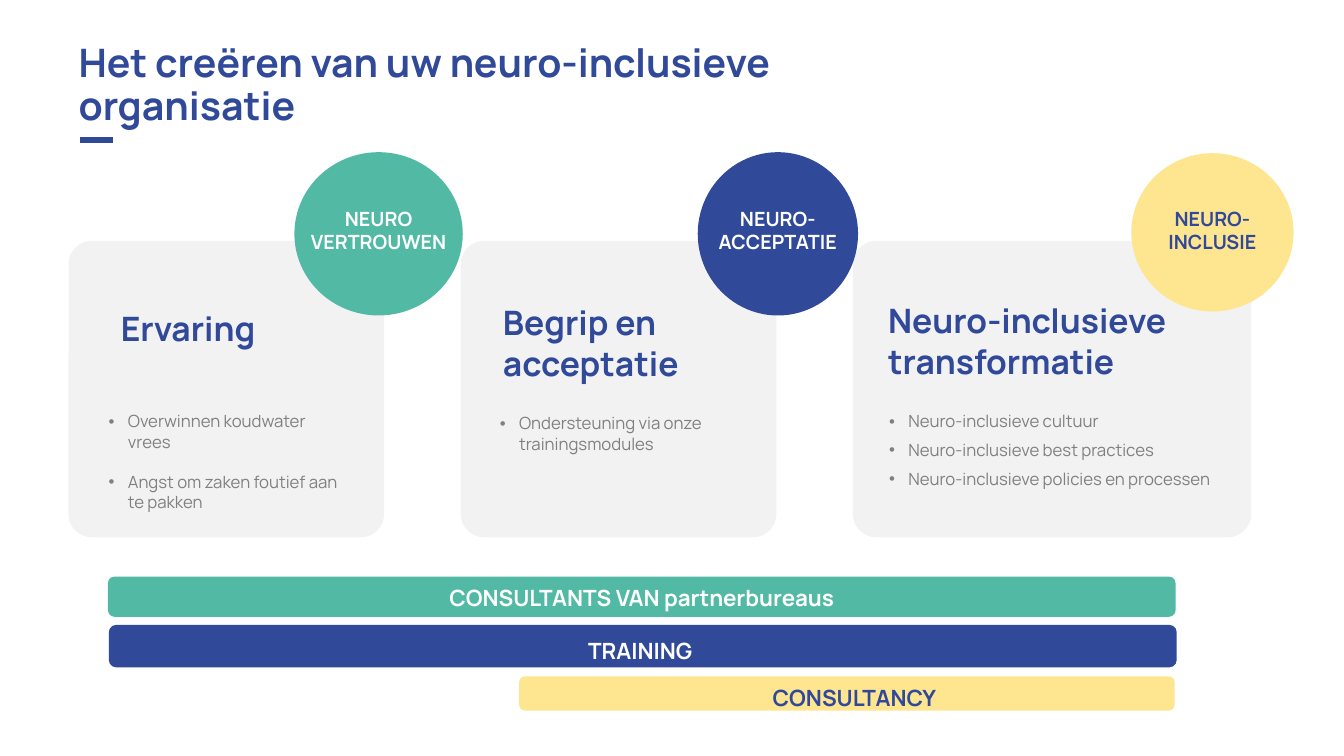
from lxml import etree
from pptx import Presentation
from pptx.dml.color import RGBColor
from pptx.enum import shapes as kinds, text as txt
from pptx.oxml import ns
from pptx.util import Inches, Pt

FONT = "Manrope"
HUES = {"blue": "314999", "green": "51B9A4", "gold": "FEE691",
        "pale": "F2F2F2", "grey": "808080", "white": "FFFFFF"}
ROUND = kinds.MSO_SHAPE.ROUNDED_RECTANGLE
OVAL = kinds.MSO_SHAPE.OVAL

CARDS = [
    {"box": (0.68, 2.39, 3.13, 2.94), "head": "Ervaring",
     "at": (0.42, 0.54, 2.34, 0.56), "lead": 1.2,
     "items": ["Overwinnen koudwater vrees", "Angst om zaken foutief aan te pakken"],
     "list": (0.3, 1.64, 2.58, 1.11), "gap": 14.4},
    {"box": (4.57, 2.39, 3.13, 2.94), "head": "Begrip en acceptatie",
     "at": (0.32, 0.56, 2.97, 0.91), "lead": 1,
     "items": ["Ondersteuning via onze trainingsmodules"],
     "list": (0.29, 1.66, 2.63, 0.5), "gap": 6},
    {"box": (8.46, 2.39, 3.95, 2.94), "head": "Neuro-inclusieve transformatie",
     "at": (0.25, 0.54, 3.44, 0.91), "lead": 1,
     "items": ["Neuro-inclusieve cultuur", "Neuro-inclusieve best practices",
               "Neuro-inclusieve policies en processen"],
     "list": (0.26, 1.64, 3.48, 1.36), "gap": 6},
]
BARS = [
    ((1.07, 5.72, 10.59, 0.4), "green", "CONSULTANTS VAN partnerbureaus", "white",
     (0, 0.03, 10.59, 0.37)),
    ((1.08, 6.2, 10.59, 0.42), "blue", "TRAINING", "white", (0, 0.07, 10.54, 0.37)),
    ((5.15, 6.71, 6.5, 0.34), "gold", "CONSULTANCY", "blue", (2.31, 0.03, 2.03, 0.4)),
]
BADGES = [
    ((2.92, 1.51, 1.67, 1.62), "green", "NEURO VERTROUWEN", "white",
     (-0.07, 0.49, 1.81, 0.57)),
    ((6.92, 1.51, 1.59, 1.62), "blue", "NEURO- ACCEPTATIE", "white",
     (-0.04, 0.49, 1.67, 0.57)),
    ((11.22, 1.52, 1.61, 1.57), "gold", "NEURO-INCLUSIE", "blue",
     (0, 0.48, 1.61, 0.57)),
]


def color(name):
    return RGBColor.from_string(HUES[name])


def inch(box):
    return [Inches(n) for n in box]


def inside(box, part):
    return box[0] + part[0], box[1] + part[1], part[2], part[3]


def block(slide, kind, box, fill):
    shape = slide.shapes.add_shape(kind, *inch(box))
    shape.shadow.inherit = False
    shape.fill.solid()
    shape.fill.fore_color.rgb = color(fill)
    shape.line.fill.background()
    return shape


def write(para, words, size, hue, bold=True):
    run = para.add_run()
    run.text = words
    run.font.name = FONT
    run.font.size = Pt(size)
    run.font.bold = bold
    run.font.color.rgb = color(hue)


def field(slide, box):
    frame = slide.shapes.add_textbox(*inch(box)).text_frame
    frame.word_wrap = True
    return frame


def bullet(para):
    props = para._p.get_or_add_pPr()
    props.set("marL", str(Inches(0.19)))
    props.set("indent", str(Inches(-0.19)))
    etree.SubElement(props, ns.qn("a:buFont")).set("typeface", "Arial")
    etree.SubElement(props, ns.qn("a:buChar")).set("char", "•")


def header(slide, box):
    title = slide.shapes.title
    title.left, title.top, title.width, title.height = inch(box)
    frame = title.text_frame
    frame.word_wrap = True
    frame.auto_size = txt.MSO_AUTO_SIZE.NONE
    frame.vertical_anchor = txt.MSO_ANCHOR.MIDDLE
    para = frame.paragraphs[0]
    para.alignment = txt.PP_ALIGN.LEFT
    para.line_spacing = 0.9
    write(para, "Het creëren van uw neuro-inclusieve organisatie", 28, "blue")
    x, y = box[0] + 0.11, box[1] + 1.12
    rule = slide.shapes.add_connector(kinds.MSO_CONNECTOR.STRAIGHT,
                                      *inch((x, y, x + 0.33, y)))
    rule.line.color.rgb = color("blue")
    rule.line.width = Pt(4)
    etree.SubElement(rule._element.spPr, ns.qn("a:effectLst"))


def card(slide, data):
    box = data["box"]
    block(slide, ROUND, box, "pale").adjustments[0] = 0.079
    para = field(slide, inside(box, data["at"])).paragraphs[0]
    para.line_spacing = data["lead"]
    write(para, data["head"], 24, "blue")
    frame = field(slide, inside(box, data["list"]))
    for i, item in enumerate(data["items"]):
        para = frame.add_paragraph() if i else frame.paragraphs[0]
        bullet(para)
        para.space_after = Pt(data["gap"])
        write(para, item, 12, "grey", False)


def label(slide, kind, size, box, fill, words, hue, part):
    block(slide, kind, box, fill)
    para = field(slide, inside(box, part)).paragraphs[0]
    para.alignment = txt.PP_ALIGN.CENTER
    write(para, words, size, hue)


def main():
    deck = Presentation()
    deck.slide_width, deck.slide_height = Inches(13.33), Inches(7.5)
    slide = deck.slides.add_slide(deck.slide_layouts[5])
    header(slide, (0.68, 0.27, 7.78, 1.17))
    for data in CARDS:
        card(slide, data)
    for bar in BARS:
        label(slide, ROUND, 16, *bar)
    for badge in BADGES:
        label(slide, OVAL, 14, *badge)
    deck.save("out.pptx")


if __name__ == "__main__":
    main()
